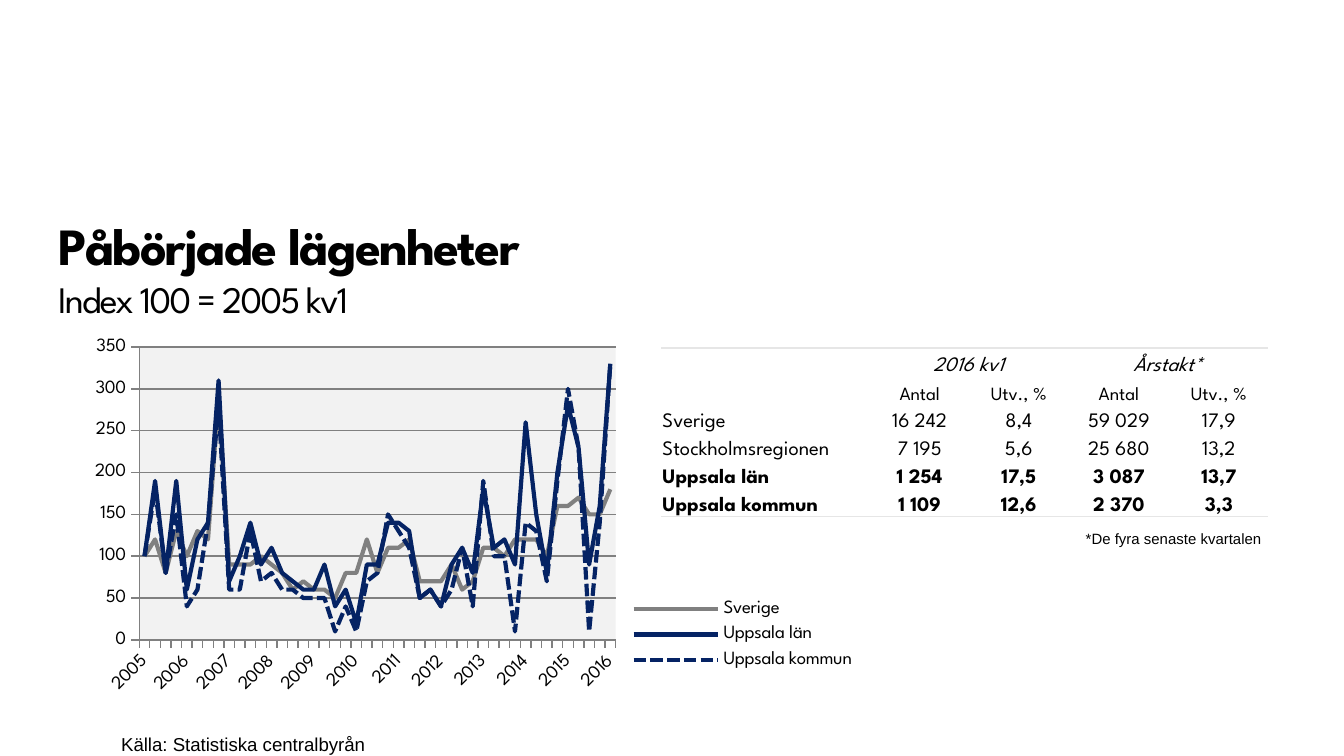
from lxml import etree
from pptx import Presentation
from pptx.chart.data import CategoryChartData
from pptx.dml.color import RGBColor
from pptx.enum.chart import XL_CHART_TYPE, XL_LEGEND_POSITION, XL_TICK_MARK
from pptx.enum.dml import MSO_LINE
from pptx.enum.text import MSO_ANCHOR, PP_ALIGN
from pptx.oxml import parse_xml
from pptx.oxml.ns import nsdecls, qn
from pptx.util import Cm, Pt

LINE_CHART = XL_CHART_TYPE.LINE
LEGEND_RIGHT = XL_LEGEND_POSITION.RIGHT
TICK_OUT = XL_TICK_MARK.OUTSIDE
SHORT_DASH = MSO_LINE.SQUARE_DOT
BOTTOM = MSO_ANCHOR.BOTTOM
TOP = MSO_ANCHOR.TOP
CENTER = PP_ALIGN.CENTER
LEFT = PP_ALIGN.LEFT

HEADING_FONT, NOTE_FONT = "League Spartan", "Arial"
BLACK, GREY, NAVY = "000000", "808080", "052364"
PLOT_GREY, RULE_GREY = "F2F2F2", "E6E6E6"
PLAIN_TABLE_STYLE = "{2D5ABB26-0587-4C30-8999-92F81FD0307C}"

# One label per year, blank for the other quarters
QUARTERS = [str(2005 + n // 4) if n % 4 == 0 else "" for n in range(45)]
SERIES = [
    ("Sverige", GREY, False,
     [100, 120, 80, 130, 100, 130, 120, 290, 90, 90, 90, 100, 90, 80, 60,
      70, 60, 60, 50, 80, 80, 120, 80, 110, 110, 120, 70, 70, 70, 90,
      60, 70, 110, 110, 100, 120, 120, 120, 100, 160, 160, 170, 150, 150, 180]),
    ("Uppsala län", NAVY, False,
     [100, 190, 80, 190, 60, 120, 140, 310, 70, 100, 140, 90, 110, 80, 70,
      60, 60, 90, 40, 60, 20, 90, 90, 140, 140, 130, 50, 60, 40, 90,
      110, 80, 180, 110, 120, 90, 260, 150, 80, 200, 280, 230, 90, 160, 330]),
    ("Uppsala kommun", NAVY, True,
     [100, 180, 80, 150, 40, 60, 140, 280, 60, 60, 130, 70, 80, 60, 60,
      50, 50, 50, 10, 40, 10, 70, 80, 150, 130, 110, 50, 60, 40, 60,
      110, 40, 190, 100, 100, 10, 140, 130, 70, 190, 300, 230, 10, 140, 330]),
]

TABLE_ROWS = [
    ["", "2016 kv1", "", "Årstakt*", ""],
    ["", "Antal", "Utv., %", "Antal", "Utv., %"],
    ["Sverige", "16 242", "8,4", "59 029", "17,9"],
    ["Stockholmsregionen", "7 195", "5,6", "25 680", "13,2"],
    ["Uppsala län", "1 254", "17,5", "3 087", "13,7"],
    ["Uppsala kommun", "1 109", "12,6", "2 370", "3,3"],
]
COLUMN_WIDTHS = [3.93, 1.9, 1.85, 1.93, 1.85]


def color(hex_value):
    return RGBColor.from_string(hex_value)


def style_font(font, size, name, bold=False, italic=False):
    font.size, font.name = Pt(size), name
    font.bold, font.italic = bold, italic
    font.color.rgb = color(BLACK)


def add_span(para, text, size, name, bold=False, italic=False):
    span = para.add_run()
    span.text = text
    style_font(span.font, size, name, bold, italic)
    return span


def add_box(slide, left, top, width, height, anchor=TOP):
    """Add a text box without margins and return its first paragraph."""
    box = slide.shapes.add_textbox(Cm(left), Cm(top), Cm(width), Cm(height))
    frame = box.text_frame
    frame.word_wrap = True
    frame.vertical_anchor = anchor
    frame.margin_left = frame.margin_right = 0
    frame.margin_top = frame.margin_bottom = 0
    return frame.paragraphs[0]


def add_title(slide, heading, subheading):
    para = add_box(slide, 1.1, 4.04, 15.77, 2.03, BOTTOM)
    spans = [add_span(para, heading, 28, HEADING_FONT, bold=True)]
    para.add_line_break()
    spans.append(add_span(para, subheading, 20, HEADING_FONT))
    for span in spans:
        span.font._element.set("spc", "-90")


def add_note(slide, text, left, top, width, size):
    para = add_box(slide, left, top, width, 0.85)
    para.line_spacing = Pt(24)
    add_span(para, text, size, NOTE_FONT)


def set_rule(cell, side):
    """Draw a 1 pt rule on one side of a cell: lnT or lnB."""
    line = parse_xml(
        f'<a:{side} {nsdecls("a")} w="12700"><a:solidFill>'
        f'<a:srgbClr val="{RULE_GREY}"/></a:solidFill></a:{side}>')
    cell._tc.get_or_add_tcPr().insert(0, line)


def fill_cell(cell, text, row, column):
    cell.fill.background()
    cell.vertical_anchor = BOTTOM
    cell.margin_left = cell.margin_right = cell.margin_top = Cm(0.02)
    cell.margin_bottom = 0
    para = cell.text_frame.paragraphs[0]
    para.alignment = CENTER if column else LEFT
    if text:
        size = 10 if row == 1 else 11
        add_span(para, text, size, HEADING_FONT, bold=row >= 4, italic=row == 0)
    else:
        # Keep empty cells from stretching the row
        etree.SubElement(para._p, qn("a:endParaRPr")).set("sz", "1000")
    if row == 0:
        set_rule(cell, "lnT")
    elif row == len(TABLE_ROWS) - 1:
        set_rule(cell, "lnB")


def add_figures_table(slide):
    row_height = 0.53
    frame = slide.shapes.add_table(
        len(TABLE_ROWS), len(COLUMN_WIDTHS), Cm(12.5), Cm(6.58),
        Cm(sum(COLUMN_WIDTHS)), Cm(row_height * len(TABLE_ROWS)))
    table = frame.table
    table.first_row = table.horz_banding = False
    table._tbl.tblPr.find(qn("a:tableStyleId")).text = PLAIN_TABLE_STYLE
    for column, width in zip(table.columns, COLUMN_WIDTHS):
        column.width = Cm(width)
    for r, texts in enumerate(TABLE_ROWS):
        table.rows[r].height = Cm(row_height)
        for c, text in enumerate(texts):
            fill_cell(table.cell(r, c), text, r, c)
    for c in (1, 3):
        table.cell(0, c).merge(table.cell(0, c + 1))


def place(element, index, x, y, width, height, inner=False):
    """Give a chart part a fixed place, in fractions of the chart."""
    for old in element.findall(qn("c:layout")):
        element.remove(old)
    target = '<c:layoutTarget val="inner"/>' if inner else ""
    element.insert(index, parse_xml(
        f'<c:layout {nsdecls("c")}><c:manualLayout>{target}'
        '<c:xMode val="edge"/><c:yMode val="edge"/>'
        f'<c:x val="{x}"/><c:y val="{y}"/><c:w val="{width}"/><c:h val="{height}"/>'
        '</c:manualLayout></c:layout>'))


def style_axis(axis):
    axis.major_tick_mark = TICK_OUT
    axis.format.line.color.rgb = color(GREY)
    axis.format.line.width = Pt(0.75)
    style_font(axis.tick_labels.font, 10, HEADING_FONT)


def add_index_chart(slide):
    data = CategoryChartData(number_format="General")
    data.categories = QUARTERS
    for name, _, _, values in SERIES:
        data.add_series(name, values)
    chart = slide.shapes.add_chart(
        LINE_CHART, Cm(1.43), Cm(6.28), Cm(15.01), Cm(7.01), data).chart
    chart.has_title = False
    style_font(chart.font, 10, HEADING_FONT)

    # Series lines
    for series, (_, line_color, dashed, _) in zip(chart.plots[0].series, SERIES):
        series.smooth = False
        series.format.line.color.rgb = color(line_color)
        series.format.line.width = Pt(2.25)
        if dashed:
            series.format.line.dash_style = SHORT_DASH

    # Axes
    years, index = chart.category_axis, chart.value_axis
    style_axis(years)
    style_axis(index)
    years.tick_labels.font._element.getparent().getparent().getparent().find(
        qn("a:bodyPr")).set("rot", "-2700000")
    index.minimum_scale, index.maximum_scale, index.major_unit = 0, 350, 50
    index.tick_labels.number_format = "#,##0"
    index.tick_labels.number_format_is_linked = False
    index.major_gridlines.format.line.color.rgb = color(GREY)
    index.major_gridlines.format.line.width = Pt(0.75)

    # Plot area and legend
    plot_area = chart._chartSpace.chart.plotArea
    place(plot_area, 0, 0.08, 0.04, 0.6, 0.79, inner=True)
    plot_area.append(parse_xml(
        f'<c:spPr {nsdecls("c", "a")}><a:solidFill>'
        f'<a:srgbClr val="{PLOT_GREY}"/></a:solidFill></c:spPr>'))
    chart.has_legend = True
    chart.legend.position = LEGEND_RIGHT
    chart.legend.include_in_layout = False
    style_font(chart.legend.font, 10, HEADING_FONT)
    place(chart.legend._element, 1, 0.69, 0.7, 0.3, 0.23)


def main():
    deck = Presentation()
    deck.slide_width, deck.slide_height = Cm(25.4), Cm(14.29)
    slide = deck.slides.add_slide(deck.slide_layouts[6])
    add_title(slide, "Påbörjade lägenheter", "Index 100 = 2005 kv1")
    add_note(slide, "Källa: Statistiska centralbyrån", 2.29, 13.43, 6, 10)
    add_figures_table(slide)
    add_note(slide, "*De fyra senaste kvartalen", 20.52, 9.5, 4, 8)
    add_index_chart(slide)
    deck.save("out.pptx")


if __name__ == "__main__":
    main()
